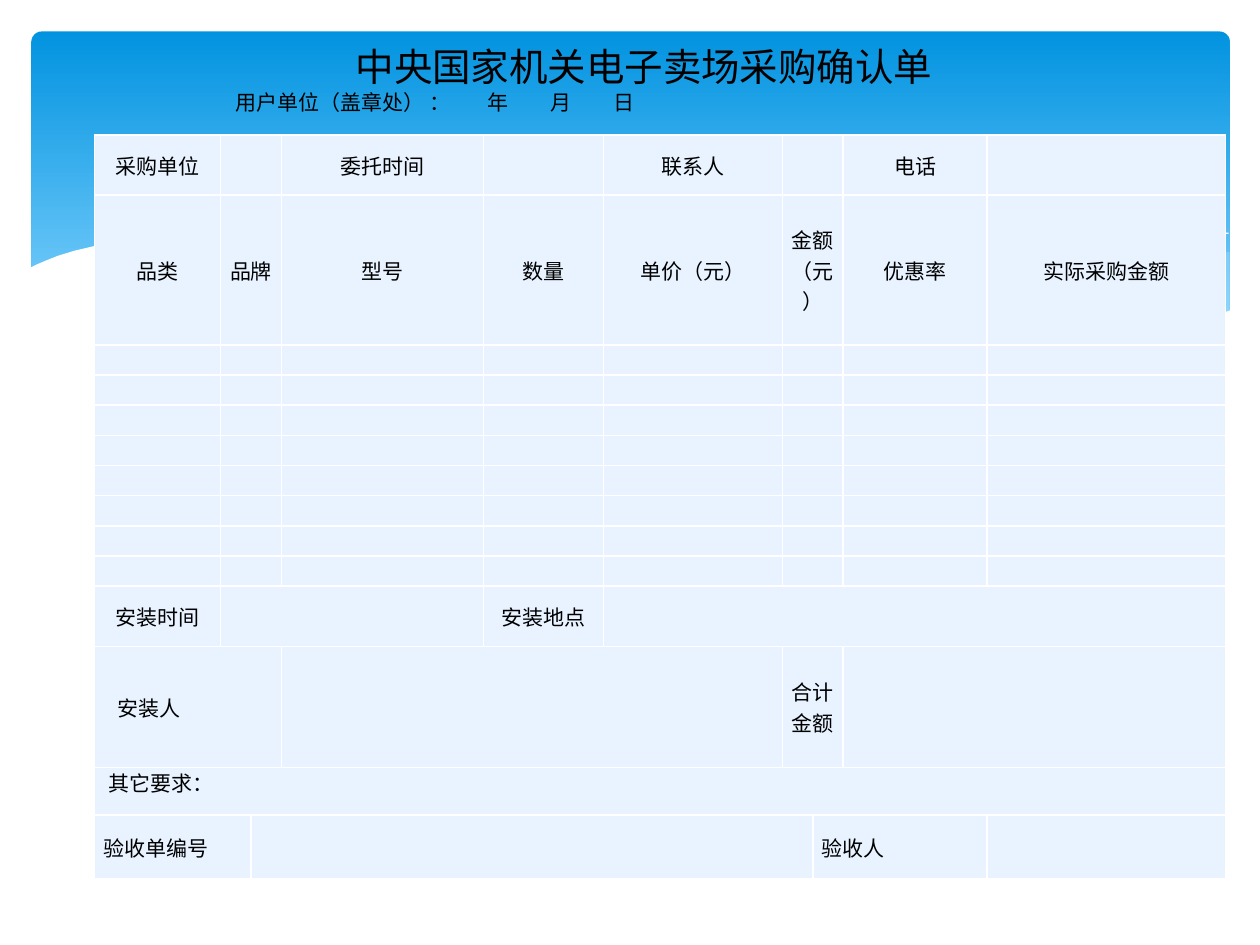
from lxml.etree import SubElement
from pptx import Presentation
from pptx.dml.color import RGBColor
from pptx.enum.shapes import MSO_SHAPE as Preset
from pptx.enum.text import MSO_ANCHOR as Anchor, MSO_AUTO_SIZE as AutoSize, PP_ALIGN as Align
from pptx.oxml.ns import qn
from pptx.util import Emu, Pt

COLUMNS, ROWS, UNIT = 1000, 750, 9144
BLACK, WHITE, CELL, PALE = "000000", "FFFFFF", "E8F3FF", "C6E7FC"

RIGHT_SWELL = [
    (975, 200), (948, 204), (921, 210), (891, 216), (861, 223), (805, 237), (753, 248),
    (706, 257), (661, 265), (691, 269), (719, 272), (745, 275), (769, 277), (803, 278),
    (835, 277), (863, 275), (889, 272), (913, 267), (935, 262), (949, 257), (963, 252),
    (976, 247), (976, 200)]
MIDDLE_SWELL = [
    (893, 273), (866, 269), (837, 265), (807, 260), (775, 254), (741, 247), (706, 240),
    (668, 231), (629, 222), (598, 214), (569, 208), (541, 203), (514, 198), (489, 194),
    (465, 191), (442, 189), (420, 187), (399, 186), (380, 185), (361, 185), (328, 187),
    (299, 189), (286, 191), (323, 196), (362, 203), (404, 211), (449, 222), (491, 232),
    (530, 240), (566, 248), (601, 255), (634, 261), (665, 266), (695, 270), (722, 274),
    (748, 276), (773, 277), (796, 278), (838, 278), (876, 275)]
LONG_CREST = [
    (309, 195), (328, 192), (353, 189), (387, 187), (416, 187), (450, 188), (489, 190),
    (533, 194), (582, 200), (636, 208), (695, 219), (760, 233), (831, 251), (907, 272)]
RIGHT_CREST = [
    (613, 257), (653, 246), (695, 235), (748, 223), (806, 210), (866, 199), (895, 194),
    (924, 190), (951, 187), (975, 185)]
WHITE_WAVE = [
    (977, 246), (959, 253), (940, 259), (920, 265), (899, 269), (875, 273), (850, 275),
    (823, 277), (793, 276), (761, 275), (726, 272), (688, 268), (648, 262), (603, 254),
    (555, 245), (503, 233), (447, 220), (391, 207), (340, 197), (292, 190), (250, 186),
    (211, 184), (177, 184), (146, 185), (119, 187), (95, 191), (76, 195), (59, 199),
    (46, 203), (36, 207), (29, 210), (23, 213), (23, 329), (977, 329)]

COLUMN_WIDTHS = [100, 24, 24, 160, 95, 142, 24, 24, 114, 189]
ROW_HEIGHTS = [48, 119] + [24] * 8 + [48, 96, 38, 51]
ITEM_SPANS = [1, 2, 1, 1, 1, 2, 1, 1]
FORM_ROWS = [
    list(zip(["采购单位", "", "委托时间", "", "联系人", "", "电话", ""], ITEM_SPANS)),
    list(zip(["品类", "品牌", "型号", "数量", "单价（元）", "金额（元）", "优惠率", "实际采购金额"],
             ITEM_SPANS)),
    *[[("", span) for span in ITEM_SPANS]] * 8,
    [("安装时间", 1), ("", 3), ("安装地点", 1), ("", 5)],
    [("安装人", 3), ("", 3), ("合计金额", 2), ("", 2)],
    [("其它要求：", 10)],
    [("验收单编号", 2), ("", 5), ("验收人", 2), ("", 1)],
]
LEFT_INDENTS = {"安装人": 11, "其它要求：": 4, "验收单编号": 0, "验收人": 0}


def grid(*cells):
    return [Emu(round(cell * UNIT)) for cell in cells]


def colour(value):
    return RGBColor.from_string(value)


def write(paragraph, text, size=12, font="Calibri", align=Align.LEFT, indent=0, tabs=()):
    paragraph.alignment = align
    properties = paragraph._p.get_or_add_pPr()
    properties.set("marL", str(indent * UNIT))
    properties.set("indent", "0")
    if tabs:
        tab_list = SubElement(properties, qn("a:tabLst"))
        for stop in tabs:
            SubElement(tab_list, qn("a:tab"), pos=str(stop * UNIT), algn="l")
    if not text:
        SubElement(paragraph._p, qn("a:endParaRPr"), sz=str(size * 100))
        return
    run = paragraph.add_run()
    run.text = text
    run.font.size = Pt(size)
    run.font.name = font
    run.font.color.rgb = colour(BLACK)


def add_band(slide, box):
    band = slide.shapes.add_shape(Preset.ROUNDED_RECTANGLE, *grid(*box))
    band.shadow.inherit = False
    band.adjustments[0] = 0.03
    band.line.fill.background()
    band.fill.gradient()
    band.fill.gradient_angle = 270
    for stop, position, value in zip(band.fill.gradient_stops, (0, 0.9), ("0293E0", "83D3FE")):
        stop.position = position
        stop.color.rgb = colour(value)


def add_curve(shapes, origin, points, fill=None, opacity=100):
    builder = shapes.build_freeform(*points[0], scale=UNIT)
    builder.add_line_segments(points[1:], close=fill is not None)
    curve = builder.convert_to_shape(*grid(*origin))
    curve.shadow.inherit = False
    if fill is None:
        curve.fill.background()
        curve.line.color.rgb = colour(WHITE)
        curve.line.width = Pt(0)
        return
    curve.line.fill.background()
    curve.fill.solid()
    curve.fill.fore_color.rgb = colour(fill)
    if opacity < 100:
        value = curve._element.spPr.find(".//" + qn("a:srgbClr"))
        SubElement(value, qn("a:alpha"), val=str(opacity * 1000))


def add_waves(slide, box):
    shapes = slide.shapes.add_group_shape().shapes
    origin = box[:2]
    add_curve(shapes, origin, RIGHT_SWELL, PALE, 29)
    add_curve(shapes, origin, MIDDLE_SWELL, PALE, 40)
    add_curve(shapes, origin, LONG_CREST)
    add_curve(shapes, origin, RIGHT_CREST)
    add_curve(shapes, origin, WHITE_WAVE, WHITE)


def format_cell(cell):
    cell.margin_left, cell.margin_right = grid(7, 7)
    cell.margin_top = cell.margin_bottom = 0
    cell.vertical_anchor = Anchor.MIDDLE
    properties = cell._tc.get_or_add_tcPr()
    for side in ("lnL", "lnR", "lnT", "lnB"):
        border = SubElement(properties, qn("a:" + side), w=str(Pt(1)))
        SubElement(SubElement(border, qn("a:solidFill")), qn("a:srgbClr"), val=WHITE)
    cell.fill.solid()
    cell.fill.fore_color.rgb = colour(CELL)


def add_form(slide, box):
    frame = slide.shapes.add_table(len(ROW_HEIGHTS), len(COLUMN_WIDTHS), *grid(*box))
    table = frame.table
    table.first_row = table.horz_banding = False
    width_scale = box[2] / sum(COLUMN_WIDTHS)
    height_scale = box[3] / sum(ROW_HEIGHTS)
    for column, width in zip(table.columns, COLUMN_WIDTHS):
        column.width = grid(width * width_scale)[0]
    for row, height in zip(table.rows, ROW_HEIGHTS):
        row.height = grid(height * height_scale)[0]
    for cell in table.iter_cells():
        format_cell(cell)
    for row_index, entries in enumerate(FORM_ROWS):
        start = 0
        for text, span in entries:
            for column_index in range(start, start + span):
                cell = table.cell(row_index, column_index)
                content = text if column_index == start else ""
                align = Align.LEFT if text in LEFT_INDENTS else Align.CENTER
                write(cell.text_frame.paragraphs[0], content, align=align,
                      indent=LEFT_INDENTS.get(text, 0))
            first = table.cell(row_index, start)
            if span > 1:
                first.merge(table.cell(row_index, start + span - 1))
            if text == "其它要求：":
                first.vertical_anchor = Anchor.TOP
            start += span


def add_heading(slide, box):
    title = slide.shapes.title
    title.left, title.top, title.width, title.height = grid(*box)
    title.element.getparent().append(title.element)
    frame = title.text_frame
    frame.word_wrap = True
    frame.auto_size = AutoSize.SHAPE_TO_FIT_TEXT
    frame.vertical_anchor = Anchor.MIDDLE
    write(frame.paragraphs[0], "中央国家机关电子卖场采购确认单", size=22, font="Arial",
          align=Align.CENTER)
    write(frame.add_paragraph(), "用户单位（盖章处） ：\t年\t月\t日", font="Arial",
          tabs=(502, 534, 566))


def main():
    presentation = Presentation()
    presentation.slide_width, presentation.slide_height = grid(COLUMNS, ROWS)
    slide = presentation.slides.add_slide(presentation.slide_layouts[5])
    add_band(slide, (25, 25, 951, 270))
    add_waves(slide, (0, 0, COLUMNS, ROWS))
    add_form(slide, (75, 107, 898, 591))
    add_heading(slide, (177, 29, 668, 67))
    presentation.save("out.pptx")


if __name__ == "__main__":
    main()
